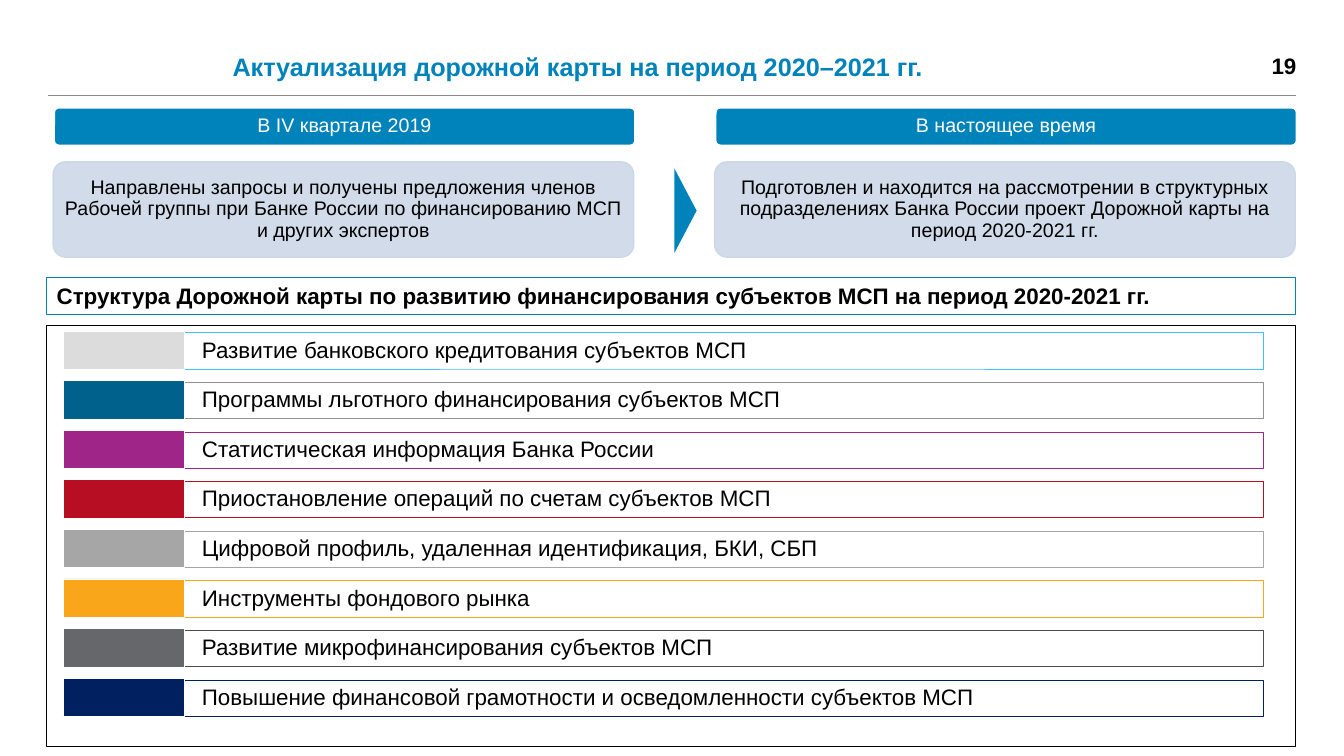
from lxml import etree
from pptx import Presentation
from pptx import util as u
from pptx.dml.color import RGBColor
from pptx.enum import shapes, text
from pptx.oxml import ns

BLUE, CARD, BLACK, WHITE, RULE = "0082BB", "CCD8E7", "000000", "FFFFFF", "888A8D"

STAGES = [
    ("В IV квартале 2019",
     "Направлены запросы и получены предложения членов Рабочей группы при Банке России "
     "по финансированию МСП и других экспертов"),
    ("В настоящее время",
     "Подготовлен и находится на рассмотрении в структурных подразделениях Банка России "
     "проект Дорожной карты на\vпериод 2020-2021 гг."),
]

SECTIONS = [
    ("Развитие банковского кредитования субъектов МСП", "DCDCDD", "3DC4FF", 0.5),
    ("Программы льготного финансирования субъектов МСП", "00618C", "929296", 0.5),
    ("Статистическая информация Банка России", "9F2588", "9F2588", 0.25),
    ("Приостановление операций по счетам субъектов МСП", "B80E23", "B80E23", 0.5),
    ("Цифровой профиль, удаленная идентификация, БКИ, СБП", "A6A6A6", "A6A6A6", 0.25),
    ("Инструменты фондового рынка", "FAA61A", "FAA61A", 0.5),
    ("Развитие микрофинансирования субъектов МСП", "66676A", "4C4D50", 0.5),
    ("Повышение финансовой грамотности и осведомленности субъектов МСП", "002060", "002060", 0.25),
]


def color(value):
    return RGBColor.from_string(value)


class SlideBuilder:
    font = "Arial"
    rectangle = shapes.MSO_SHAPE.RECTANGLE
    rounded = shapes.MSO_SHAPE.ROUNDED_RECTANGLE

    def __init__(self, presentation):
        self.slide = presentation.slides.add_slide(presentation.slide_layouts[5])

    def set_text(self, shape, words, size, ink, bold=False, align=text.PP_ALIGN.LEFT,
                 anchor=text.MSO_ANCHOR.MIDDLE, insets=(0.25, 0.13, 0.25, 0.13), spacing=1.0):
        frame = shape.text_frame
        frame.text = words
        frame.word_wrap = True
        frame.auto_size = text.MSO_AUTO_SIZE.NONE
        frame.vertical_anchor = anchor
        (frame.margin_left, frame.margin_top,
         frame.margin_right, frame.margin_bottom) = map(u.Cm, insets)
        paragraph = frame.paragraphs[0]
        paragraph.alignment = align
        paragraph.line_spacing = spacing
        for run in paragraph.runs:
            run.font.name = self.font
            run.font.size = u.Pt(size)
            run.font.bold = bold
            run.font.color.rgb = color(ink)

    def title(self, words, place):
        shape = self.slide.shapes.title
        shape.left, shape.top, shape.width, shape.height = map(u.Cm, place)
        self.set_text(shape, words, 18, BLUE, bold=True, anchor=text.MSO_ANCHOR.TOP)

    def label(self, words, place, **style):
        self.set_text(self.slide.shapes.add_textbox(*map(u.Cm, place)), words, **style)

    def box(self, place, fill, line=None, width=0.5, kind=rectangle, radius=None, opacity=None):
        shape = self.slide.shapes.add_shape(kind, *map(u.Cm, place))
        shape.shadow.inherit = False
        shape.fill.solid()
        shape.fill.fore_color.rgb = color(fill)
        if opacity:
            tint = shape._element.spPr.find(ns.qn("a:solidFill"))[0]
            etree.SubElement(tint, ns.qn("a:alpha"), val=str(opacity * 1000))
        if line:
            shape.line.color.rgb = color(line)
            shape.line.width = u.Pt(width)
        else:
            shape.line.fill.background()
        if radius:
            shape.adjustments[0] = radius
        return shape

    def rule(self, left, right, top):
        connector = self.slide.shapes.add_connector(
            shapes.MSO_CONNECTOR.STRAIGHT, u.Cm(left), u.Cm(top), u.Cm(right), u.Cm(top))
        connector.line.color.rgb = color(RULE)
        connector.line.width = u.Pt(0.5)
        etree.SubElement(connector._element.spPr, ns.qn("a:effectLst"))

    def stage(self, left, heading, details):
        header = self.box((left + 0.03, 2.72, 14.63, 0.94), BLUE, WHITE, 1, self.rounded, 0.12)
        self.set_text(header, heading, 14, WHITE, align=text.PP_ALIGN.CENTER,
                      insets=[0.08] * 4, spacing=0.9)
        card = self.box((left, 4.08, 14.63, 2.4), CARD, CARD, 1, self.rounded, 0.13, 90)
        self.set_text(card, details, 14, BLACK, align=text.PP_ALIGN.CENTER,
                      insets=[0.13] * 4, spacing=0.9)

    def section(self, top, words, tag, line, width):
        row = self.box((4.09, top, 27.74, 0.92), WHITE, line, width, opacity=40)
        self.set_text(row, words, 16, BLACK, insets=(1, 0.16, 0.16, 0.16), spacing=0.9)
        self.box((1.6, top - 0.04, 3.05, 0.97), tag, WHITE)

    def arrow(self, place):
        triangle = self.box(place, BLUE, kind=shapes.MSO_SHAPE.ISOSCELES_TRIANGLE)
        triangle.rotation = 90


def main():
    presentation = Presentation()
    presentation.slide_width, presentation.slide_height = u.Cm(33.87), u.Cm(19.05)
    builder = SlideBuilder(presentation)

    builder.title("Актуализация дорожной карты на период 2020–2021 гг.", (5.61, 1.17, 23.44, 0.9))
    builder.label("19", (30.61, 1.2, 2.06, 0.9), size=16, ink=BLACK, bold=True,
                  align=text.PP_ALIGN.RIGHT, insets=[0] * 4)
    builder.rule(1.2, 32.66, 2.41)

    for index, (heading, details) in enumerate(STAGES):
        builder.stage(1.34 + index * 16.67, heading, details)
    builder.arrow((16.21, 5.03, 2.13, 0.56))

    banner = builder.box((1.18, 6.99, 31.47, 0.94), WHITE, BLUE, 0.75)
    builder.set_text(banner, "Структура Дорожной карты по развитию финансирования субъектов МСП "
                     "на период 2020-2021 гг.", 16, BLACK, bold=True)

    builder.box((1.18, 8.21, 31.47, 10.61), WHITE, BLACK)
    for index, section in enumerate(SECTIONS):
        builder.section(8.38 + index * 1.25, *section)

    presentation.save("out.pptx")


if __name__ == "__main__":
    main()
